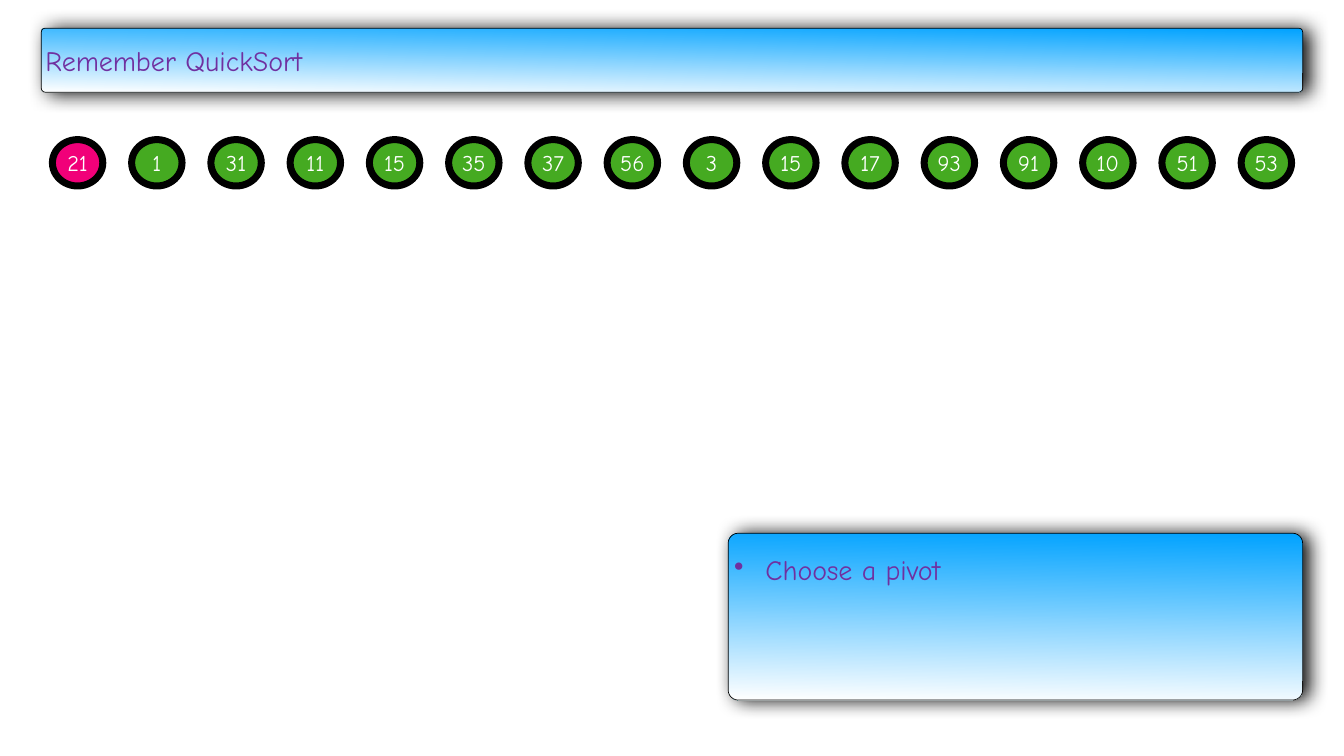
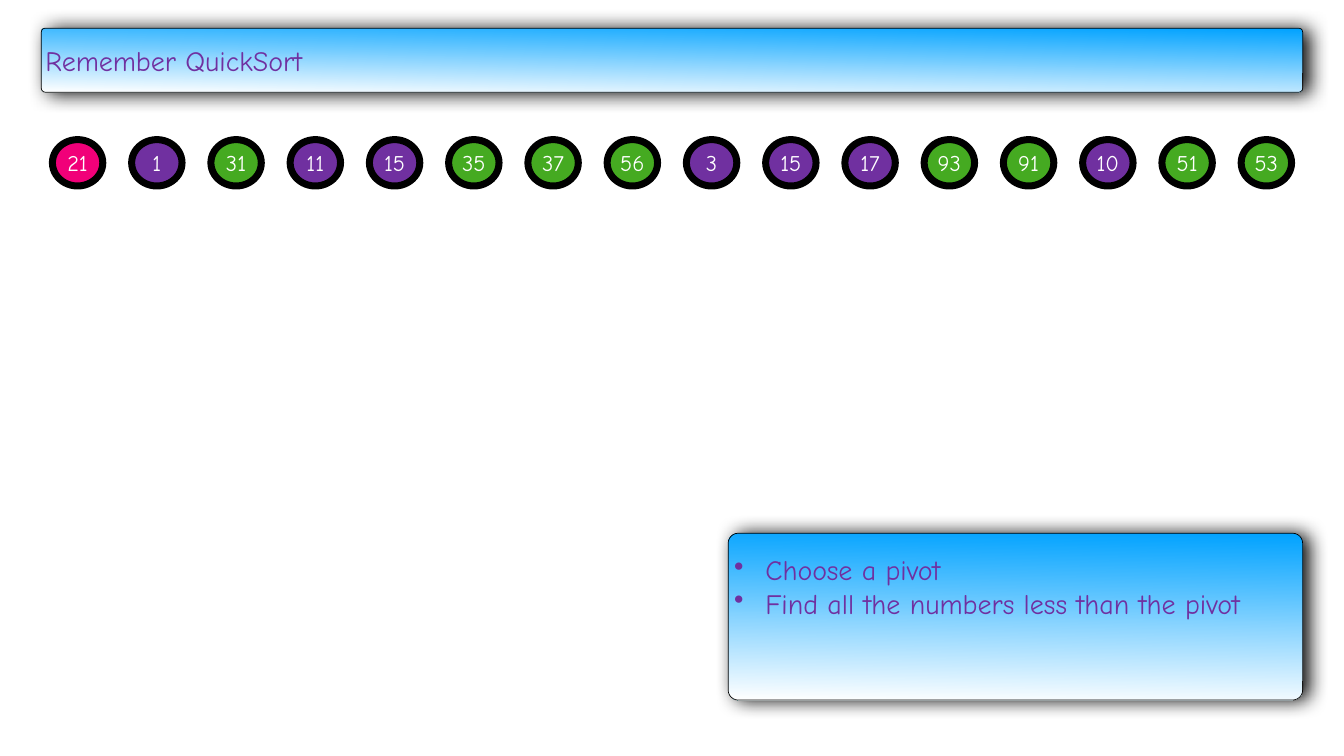
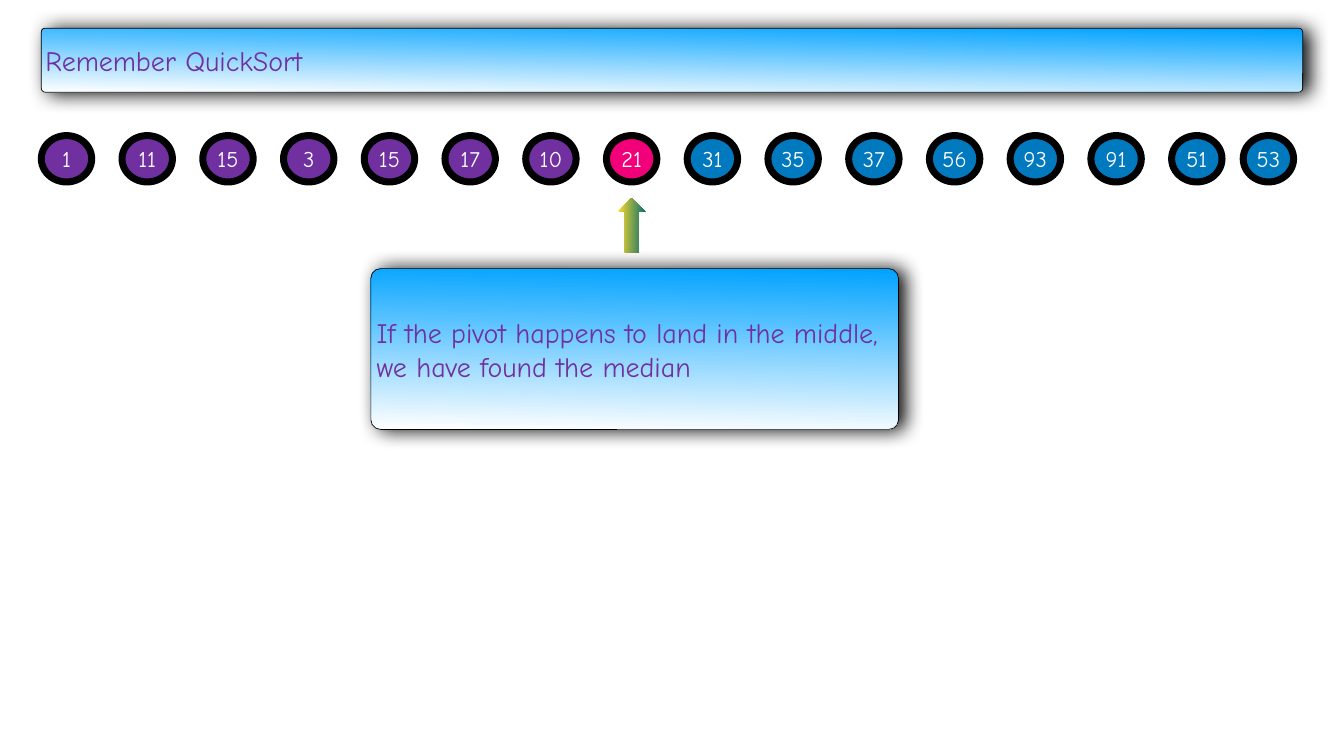
from lxml.etree import SubElement
from pptx import Presentation
from pptx.dml.color import RGBColor
from pptx.enum.shapes import MSO_SHAPE
from pptx.enum.text import MSO_ANCHOR, PP_ALIGN
from pptx.oxml.ns import qn
from pptx.util import Inches, Pt

FONT = "Comic Neue"
BLACK, WHITE = "000000", "FFFFFF"
PIVOT, UNSORTED, SMALLER, LARGER = "F10079", "45AA21", "7030A0", "0079BF"
PANEL_TOP, PANEL_TEXT = "00A2FF", "7030A0"
ARROW_START, ARROW_END = "FFD932", "0B7468"

NUMBERS = [21, 1, 31, 11, 15, 35, 37, 56, 3, 15, 17, 93, 91, 10, 51, 53]
STEPS = ["Choose a pivot", "Find all the numbers less than the pivot"]


def color(hex_string):
    return RGBColor.from_string(hex_string)


def add_plain_shape(slide, kind, left, top, width, height):
    shape = slide.shapes.add_shape(
        kind, Inches(left), Inches(top), Inches(width), Inches(height))
    shape.shadow.inherit = False
    return shape


def set_outline(shape, width):
    shape.line.color.rgb = color(BLACK)
    shape.line.width = Pt(width)


def set_gradient(shape, start, end, end_position=1):
    shape.fill.gradient()
    shape.fill.gradient_angle = 269
    first, last = shape.fill.gradient_stops
    first.color.rgb, first.position = color(start), 0
    last.color.rgb, last.position = color(end), end_position


def add_glow_shadow(shape):
    effects = shape._element.spPr.find(qn("a:effectLst"))
    shadow = SubElement(effects, qn("a:outerShdw"), blurRad=str(Pt(28)),
                        dist=str(Pt(9)), dir="0", rotWithShape="0")
    shadow_color = SubElement(shadow, qn("a:srgbClr"), val=BLACK)
    SubElement(shadow_color, qn("a:alpha"), val="97000")


def add_bullet(paragraph):
    properties = paragraph._p.get_or_add_pPr()
    properties.set("marL", str(Inches(0.62)))
    properties.set("indent", str(Inches(-0.62)))
    SubElement(properties, qn("a:buChar"), char="•")


def write_lines(shape, lines, size, text_color, alignment):
    frame = shape.text_frame
    frame.word_wrap = True
    frame.vertical_anchor = MSO_ANCHOR.MIDDLE
    frame.margin_left = frame.margin_right = Inches(0.06)
    frame.margin_top = frame.margin_bottom = Inches(0.06)
    frame.text = "\n".join(lines)
    for paragraph in frame.paragraphs:
        paragraph.alignment = alignment
        paragraph.font.name = FONT
        paragraph.font.size = Pt(size)
        paragraph.font.color.rgb = color(text_color)


def add_panel(slide, left, top, width, height, lines):
    panel = add_plain_shape(
        slide, MSO_SHAPE.ROUNDED_RECTANGLE, left, top, width, height)
    panel.adjustments[0] = 0.06
    set_gradient(panel, PANEL_TOP, WHITE)
    set_outline(panel, 1)
    add_glow_shadow(panel)
    write_lines(panel, lines, 40, PANEL_TEXT, PP_ALIGN.LEFT)
    return panel


def add_steps(slide, steps):
    panel = add_panel(slide, 14.45, 10.58, 11.4, 3.31, steps)
    panel.text_frame.vertical_anchor = MSO_ANCHOR.TOP
    panel.text_frame.margin_top = Inches(0.33)
    for paragraph in panel.text_frame.paragraphs:
        add_bullet(paragraph)


def add_number(slide, left, top, number, fill):
    circle = add_plain_shape(slide, MSO_SHAPE.OVAL, left, top, 1, 0.92)
    circle.fill.solid()
    circle.fill.fore_color.rgb = color(fill)
    set_outline(circle, 10)
    write_lines(circle, [str(number)], 32, WHITE, PP_ALIGN.CENTER)


def add_number_row(slide, first_left, last_left, top, numbers, fills):
    pitch = (last_left - first_left) / (len(numbers) - 1)
    for index, (number, fill) in enumerate(zip(numbers, fills)):
        add_number(slide, first_left + index * pitch, top, number, fill)


def add_pivot_arrow(slide):
    arrow = add_plain_shape(slide, MSO_SHAPE.RIGHT_ARROW, 12, 4.2, 1.07, 0.53)
    arrow.rotation = 270
    set_gradient(arrow, ARROW_START, ARROW_END, 0.99)
    arrow.line.fill.background()


def add_titled_slide(presentation):
    slide = presentation.slides.add_slide(presentation.slide_layouts[6])
    add_panel(slide, 0.82, 0.56, 25.03, 1.27, ["Remember QuickSort"])
    return slide


def add_step_slide(presentation, steps, smaller_fill):
    slide = add_titled_slide(presentation)
    pivot, *others = NUMBERS
    fills = [PIVOT] + [smaller_fill if number < pivot else UNSORTED
                       for number in others]
    add_number_row(slide, 1.04, 24.63, 2.77, NUMBERS, fills)
    add_steps(slide, steps)


def add_partitioned_slide(presentation):
    slide = add_titled_slide(presentation)
    pivot, *others = NUMBERS
    smaller = [number for number in others if number < pivot]
    larger = [number for number in others if number > pivot]
    numbers = smaller + [pivot] + larger
    fills = [SMALLER] * len(smaller) + [PIVOT] + [LARGER] * len(larger)
    add_number_row(slide, 0.82, 23.25, 2.69, numbers[:-1], fills[:-1])
    add_number(slide, 24.67, 2.69, numbers[-1], fills[-1])
    add_pivot_arrow(slide)
    add_panel(slide, 7.36, 5.33, 10.47, 3.19, [
        "If the pivot happens to land in the middle, we have found the median"])


def main():
    presentation = Presentation()
    presentation.slide_width = Inches(26.67)
    presentation.slide_height = Inches(15)
    add_step_slide(presentation, STEPS[:1], UNSORTED)
    add_step_slide(presentation, STEPS, SMALLER)
    add_partitioned_slide(presentation)
    presentation.save("out.pptx")


if __name__ == "__main__":
    main()
